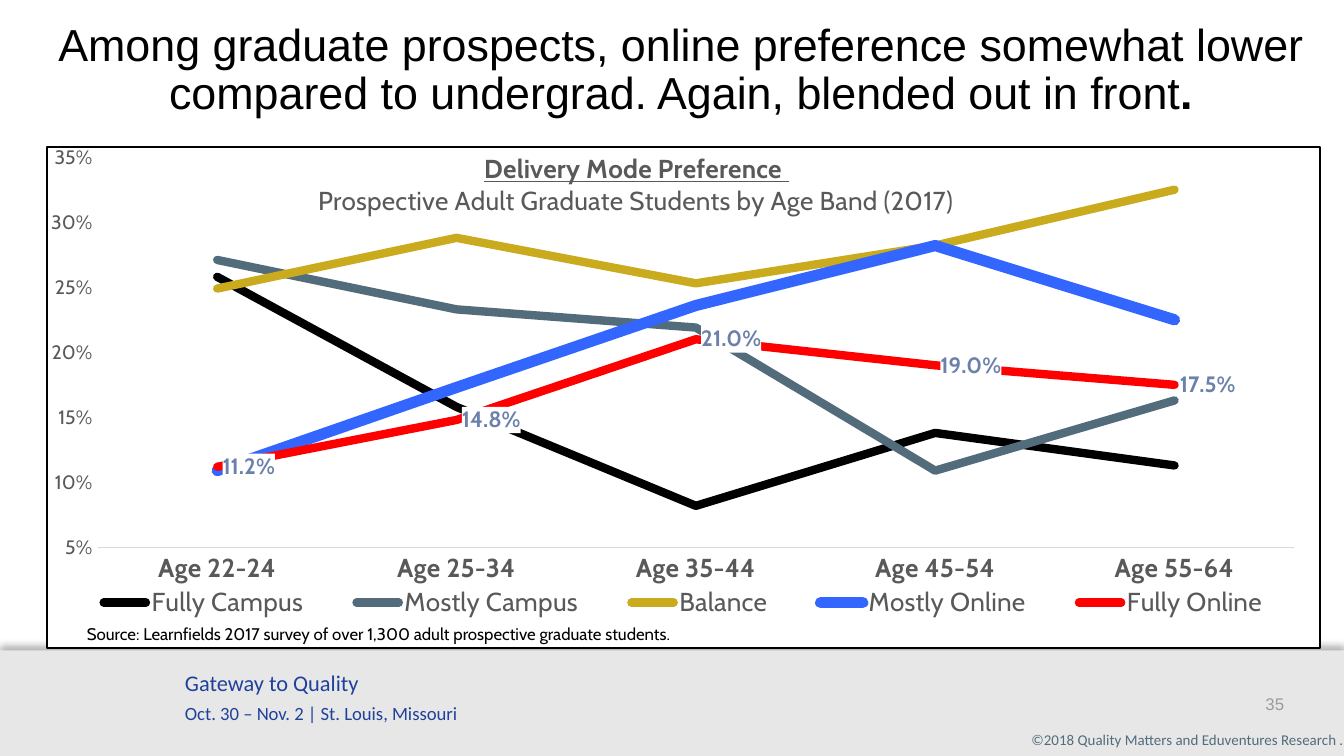
from dataclasses import dataclass

from pptx import Presentation
from pptx.chart.data import CategoryChartData
from pptx.dml.color import RGBColor
from pptx.enum.chart import (XL_CHART_TYPE, XL_LABEL_POSITION,
                             XL_LEGEND_POSITION, XL_TICK_MARK)
from pptx.enum.shapes import MSO_SHAPE
from pptx.enum.text import MSO_ANCHOR, MSO_AUTO_SIZE, PP_ALIGN
from pptx.oxml import parse_xml
from pptx.oxml.ns import nsdecls, qn
from pptx.util import Pt


@dataclass(frozen=True)
class Theme:
    head: str = "Arial"
    foot: str = "Calibri"
    data: str = "Cabin"
    black: str = "000000"
    white: str = "FFFFFF"
    band: str = "E7E7E7"
    blue: str = "1F419A"
    slate: str = "526C7C"
    gold: str = "CAAB1E"
    azure: str = "3366FF"
    red: str = "FF0000"
    label: str = "6B80AA"
    gray: str = "595959"
    rule: str = "D9D9D9"
    pale: str = "999B9C"
    title: float = 24
    large: float = 14
    mid: float = 12
    tick: float = 10.5
    base: float = 10
    small: float = 9
    tiny: float = 8


def style(font, face, size, color, bold=False, under=False):
    font.name, font.size = face, Pt(size)
    font.bold, font.underline = bold, under
    font.color.rgb = RGBColor.from_string(color)


def write(para, text, align=PP_ALIGN.LEFT, before=0, **look):
    run = para.add_run()
    run.text = text
    para.alignment = align
    para.space_before = Pt(before)
    style(run.font, **look)


def place(parent, index, x, y, w=None, h=None, inner=False):
    """Set a manual layout, in fractions of the chart, as child number index."""
    for old in parent.findall(qn("c:layout")):
        parent.remove(old)
    parts = ['<c:layoutTarget val="inner"/>'] if inner else []
    parts += [f'<c:{key}Mode val="edge"/>' for key in "xy"]
    parts += [f'<c:{key} val="{val}"/>'
              for key, val in zip("xywh", (x, y, w, h)) if val is not None]
    parent.insert(index, parse_xml(
        f'<c:layout {nsdecls("c")}><c:manualLayout>{"".join(parts)}'
        '</c:manualLayout></c:layout>'))


def paint(fill, line=None):
    """Return chart shape properties with a solid fill and optional outline."""
    solid = '<a:solidFill><a:srgbClr val="{}"/></a:solidFill>'
    edge = f'<a:ln w="{Pt(1)}">{solid.format(line)}</a:ln>' if line else ""
    return parse_xml(f'<c:spPr {nsdecls("c", "a")}>{solid.format(fill)}{edge}</c:spPr>')


class Deck:
    """Holds the theme, the presentation and the current slide."""

    def __init__(self, theme):
        self.theme = theme
        self.prs = Presentation()
        self.prs.slide_width, self.prs.slide_height = Pt(720), Pt(405)
        self.slide = self.prs.slides.add_slide(self.prs.slide_layouts[5])

    def band(self, x, y, w, h):
        box = self.slide.shapes.add_shape(
            MSO_SHAPE.RECTANGLE, Pt(x), Pt(y), Pt(w), Pt(h))
        box.fill.solid()
        box.fill.fore_color.rgb = RGBColor.from_string(self.theme.band)
        box.line.fill.background()
        box._element.spPr.append(parse_xml(
            f'<a:effectLst {nsdecls("a")}><a:outerShdw blurRad="{Pt(4)}" '
            f'dist="{Pt(3)}" dir="16200000" rotWithShape="0">'
            f'<a:srgbClr val="{self.theme.black}"><a:alpha val="30000"/>'
            '</a:srgbClr></a:outerShdw></a:effectLst>'))

    def title(self, text, end, x, y, w, h):
        box = self.slide.shapes.title
        box.left, box.top, box.width, box.height = Pt(x), Pt(y), Pt(w), Pt(h)
        frame = box.text_frame
        frame.auto_size = MSO_AUTO_SIZE.NONE
        frame.word_wrap = True
        frame.vertical_anchor = MSO_ANCHOR.BOTTOM
        frame.margin_top = frame.margin_bottom = Pt(7.2)
        para = frame.paragraphs[0]
        para.line_spacing = 0.9
        look = dict(face=self.theme.head, size=self.theme.title,
                    color=self.theme.black, align=PP_ALIGN.CENTER)
        write(para, text, **look)
        write(para, end, bold=True, **look)

    def text(self, x, y, w, h, lines, right=7.2, anchor=MSO_ANCHOR.TOP, **look):
        """Add a text box; lines holds pairs of text and type size."""
        frame = self.slide.shapes.add_textbox(
            Pt(x), Pt(y), Pt(w), Pt(h)).text_frame
        frame.word_wrap = True
        frame.margin_right = Pt(right)
        frame.vertical_anchor = anchor
        for i, (text, size) in enumerate(lines):
            para = frame.add_paragraph() if i else frame.paragraphs[0]
            write(para, text, size=size, before=3 if i else 0, **look)

    def chart(self, x, y, w, h, ages, modes):
        """Add the line chart; modes holds name, colour, width and values."""
        t = self.theme
        data = CategoryChartData(number_format="0.0%")
        data.categories = ages
        for name, _, _, vals in modes:
            data.add_series(name, vals)
        chart = self.slide.shapes.add_chart(
            XL_CHART_TYPE.LINE, Pt(x), Pt(y), Pt(w), Pt(h), data).chart
        style(chart.font, t.data, t.base, t.black)
        space = chart._chartSpace
        space.find(qn("c:chart")).addnext(paint(t.white, t.black))
        place(space.find(".//" + qn("c:plotArea")), 0,
              0.04, 0.02, 0.94, 0.78, inner=True)
        chart.plots[0].vary_by_categories = False
        for line, (_, color, width, _) in zip(chart.plots[0].series, modes):
            line.smooth = False
            line.format.line.width = Pt(width)
            line.format.line.color.rgb = RGBColor.from_string(color)
            line._element.find(".//" + qn("a:ln")).set("cap", "rnd")
        self.axes(chart)
        self.legend(chart)
        self.head(chart)
        self.labels(chart.plots[0].series[-1])

    def axes(self, chart):
        t = self.theme
        cat, val = chart.category_axis, chart.value_axis
        for axis in (cat, val):
            axis.major_tick_mark = axis.minor_tick_mark = XL_TICK_MARK.NONE
            axis.has_major_gridlines = False
        style(cat.tick_labels.font, t.data, t.large, t.gray, bold=True)
        cat.format.line.width = Pt(0.75)
        cat.format.line.color.rgb = RGBColor.from_string(t.rule)
        style(val.tick_labels.font, t.data, t.tick, t.gray)
        val.tick_labels.number_format = "0%"
        val.tick_labels.number_format_is_linked = False
        val.minimum_scale, val.maximum_scale, val.major_unit = 0.05, 0.35, 0.05
        val.format.line.fill.background()

    def legend(self, chart):
        t = self.theme
        chart.has_legend = True
        legend = chart.legend
        legend.position = XL_LEGEND_POSITION.BOTTOM
        legend.include_in_layout = False
        style(legend.font, t.data, t.large, t.gray)
        place(legend._element, 1, 0.01, 0.87, 0.98, 0.08)

    def head(self, chart):
        t = self.theme
        look = dict(face=t.data, size=t.large, color=t.gray,
                    align=PP_ALIGN.CENTER)
        frame = chart.chart_title.text_frame
        write(frame.paragraphs[0], "Delivery Mode Preference ",
              bold=True, under=True, **look)
        write(frame.add_paragraph(),
              "Prospective Adult Graduate Students by Age Band (2017)", **look)
        chart.chart_title.include_in_layout = True
        place(chart.chart_title._element, 1, 0.21, 0)

    def labels(self, line):
        t = self.theme
        labels = line.data_labels
        labels.show_value = True
        labels.number_format = "0.0%"
        labels.number_format_is_linked = False
        labels.position = XL_LABEL_POSITION.RIGHT
        style(labels.font, t.data, t.mid, t.label, bold=True)
        labels._element.find(qn("c:numFmt")).addnext(paint(t.white))


def main():
    t = Theme()
    deck = Deck(t)
    deck.band(0, 348.5, 720, 56.5)
    deck.text(92, 355, 460, 37,
              [("Gateway to Quality", t.mid),
               ("Oct. 30 – Nov. 2 | St. Louis, Missouri", t.base)],
              face=t.foot, color=t.blue)
    deck.text(538, 388, 182, 17,
              [("©2018 Quality Matters and Eduventures Research .", t.tiny)],
              right=0, face=t.foot, color=t.slate, align=PP_ALIGN.RIGHT)
    deck.text(533, 366.5, 162, 21.5, [("35", t.small)], face=t.head,
              color=t.pale, align=PP_ALIGN.RIGHT, anchor=MSO_ANCHOR.MIDDLE)
    deck.title("Among graduate prospects, online preference somewhat lower "
               "compared to undergrad. Again, blended out in front", ".",
               22, 12, 685.5, 59)
    deck.chart(24.5, 77.5, 683, 270,
               ["Age 22-24", "Age 25-34", "Age 35-44", "Age 45-54", "Age 55-64"],
               [("Fully Campus", t.black, 4.5, (0.258, 0.158, 0.082, 0.138, 0.113)),
                ("Mostly Campus", t.slate, 4.5, (0.271, 0.233, 0.219, 0.109, 0.163)),
                ("Balance", t.gold, 4.5, (0.249, 0.288, 0.253, 0.282, 0.325)),
                ("Mostly Online", t.azure, 6, (0.109, 0.173, 0.236, 0.282, 0.225)),
                ("Fully Online", t.red, 4.5, (0.112, 0.148, 0.21, 0.19, 0.175))])
    deck.text(39.5, 330.5, 385, 18,
              [("Source: Learnfields 2017 survey of over 1,300 adult "
                "prospective graduate students.", t.small)],
              face=t.data, color=t.black)
    deck.prs.save("out.pptx")


if __name__ == "__main__":
    main()
